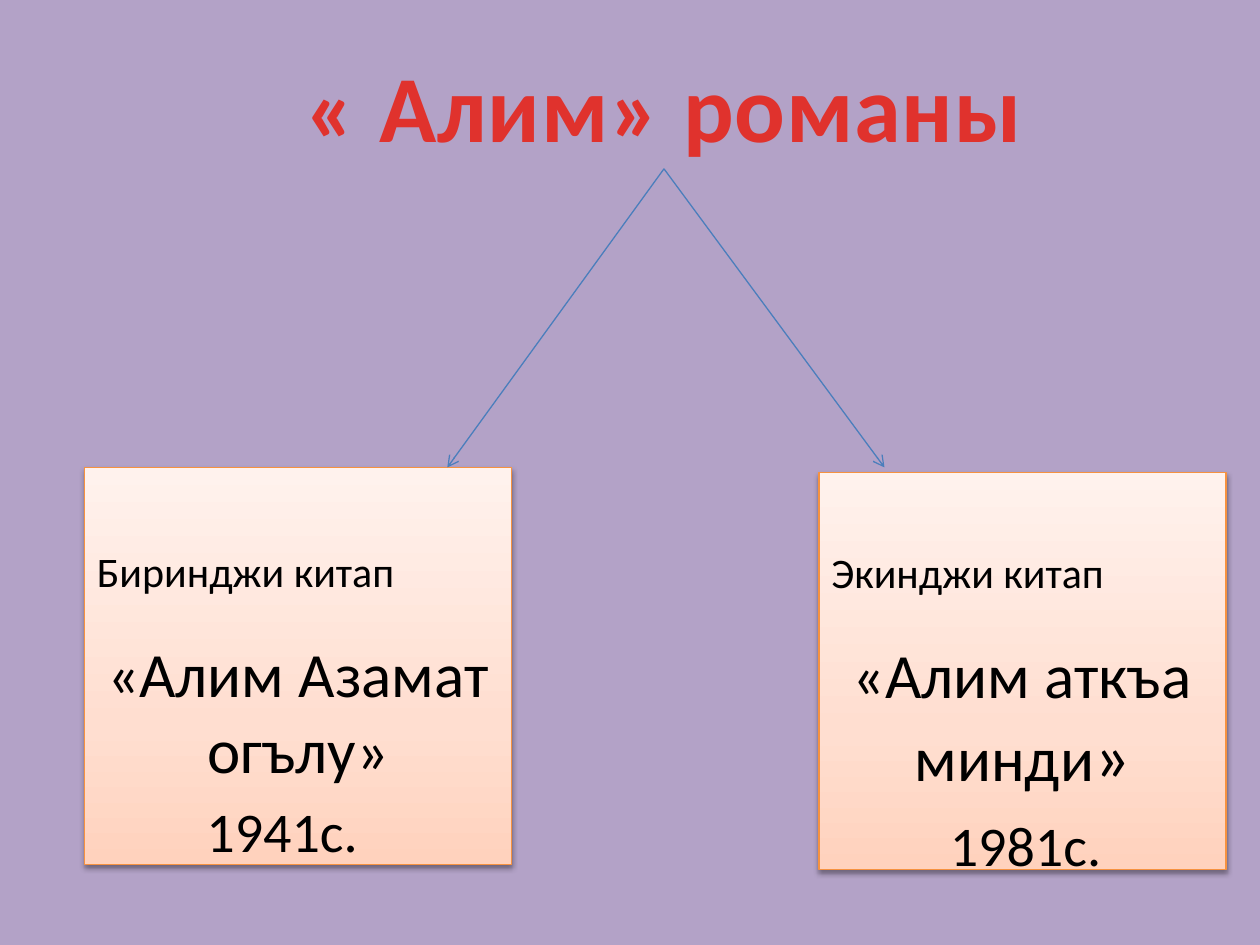
import copy
from dataclasses import dataclass

import pptx
import pptx.dml.color
import pptx.enum.shapes
import pptx.enum.text
import pptx.oxml
import pptx.oxml.ns
import pptx.util

PX = 9144
ALIGN = pptx.enum.text.PP_ALIGN
ANCHOR = pptx.enum.text.MSO_ANCHOR
NS = pptx.oxml.ns.nsdecls("a")


@dataclass(frozen=True)
class Theme:
    font: str = "Calibri"
    background: str = "B3A2C7"
    title: str = "E0322D"
    text: str = "000000"
    arrow: str = "4B7EBC"
    border: str = "F69240"
    box_stops: tuple[tuple[float, str], ...] = ((0, "FFD2BD"), (0.35, "FFDED0"), (1, "FFF2ED"))
    title_size: int = 54
    label_size: int = 24
    name_size: int = 36
    quote_size: int = 40
    year_size: int = 32
    name_gap: int = 22
    line_width: float = 0.75


@dataclass(frozen=True)
class Box:
    left: int
    top: int
    width: int
    height: int

    def emu(self) -> tuple[int, ...]:
        return tuple(v * PX for v in (self.left, self.top, self.width, self.height))


@dataclass(frozen=True)
class Book:
    box: Box
    label: str
    name: tuple[tuple[str, int], ...]
    year: str
    year_box: Box
    arrow_end: tuple[int, int]


THEME = Theme()
TITLE_BOX = Box(229, 33, 596, 101)
ARROW_START = (527, 134)
BOOKS = (
    Book(Box(67, 371, 339, 315), "Биринджи китап",
         (("«Алим Азамат огълу»", THEME.name_size),),
         "1941c.", Box(154, 627, 142, 64), (355, 371)),
    Book(Box(650, 375, 323, 315), "Экинджи китап",
         (("«Алим аткъа минди", THEME.name_size), ("»", THEME.quote_size)),
         "1981c.", Box(744, 638, 142, 64), (702, 371)),
)


def rgb(value: str) -> pptx.dml.color.RGBColor:
    return pptx.dml.color.RGBColor.from_string(value)


def add_run(p, text: str, size: int, color: str = THEME.text, bold: bool = False):
    r = p.add_run()
    r.text = text
    r.font.name = THEME.font
    r.font.size = pptx.util.Pt(size)
    r.font.bold = bold
    r.font.color.rgb = rgb(color)
    return r


def add_title(s, text: str) -> None:
    sp = s.shapes.title
    sp.left, sp.top, sp.width, sp.height = TITLE_BOX.emu()
    tf = sp.text_frame
    tf.word_wrap = False
    tf.auto_size = pptx.enum.text.MSO_AUTO_SIZE.SHAPE_TO_FIT_TEXT
    tf.vertical_anchor = ANCHOR.TOP
    p = tf.paragraphs[0]
    p.alignment = ALIGN.CENTER
    r = add_run(p, text, THEME.title_size, THEME.title, True)
    r.font._element.set("spc", "50")


def add_arrow(s, start: tuple[int, int], end: tuple[int, int]) -> None:
    points = [v * PX for v in start + end]
    cx = s.shapes.add_connector(pptx.enum.shapes.MSO_CONNECTOR.STRAIGHT, *points)
    cx.line.color.rgb = rgb(THEME.arrow)
    cx.line.width = pptx.util.Pt(THEME.line_width)
    cx.line._get_or_add_ln().append(pptx.oxml.parse_xml(f'<a:tailEnd {NS} type="arrow"/>'))
    cx._element.spPr.append(pptx.oxml.parse_xml(f"<a:effectLst {NS}/>"))


def fill_gradient(sp) -> None:
    sp.fill.gradient()
    sp.fill.gradient_angle = 90
    gs_list = sp._element.spPr.find(".//" + pptx.oxml.ns.qn("a:gsLst"))
    while len(gs_list) < len(THEME.box_stops):
        gs_list.append(copy.deepcopy(gs_list[0]))
    for stop, (position, color) in zip(sp.fill.gradient_stops, THEME.box_stops):
        stop.position = position
        stop.color.rgb = rgb(color)


def add_shadow(sp) -> None:
    sp.shadow.inherit = False
    effects = sp._element.spPr.find(pptx.oxml.ns.qn("a:effectLst"))
    effects.append(pptx.oxml.parse_xml(
        f'<a:outerShdw {NS} blurRad="40000" dist="20000" dir="5400000" rotWithShape="0">'
        '<a:srgbClr val="000000"><a:alpha val="38000"/></a:srgbClr></a:outerShdw>'))


def add_book(s, book: Book) -> None:
    sp = s.shapes.add_shape(pptx.enum.shapes.MSO_SHAPE.RECTANGLE, *book.box.emu())
    fill_gradient(sp)
    sp.line.color.rgb = rgb(THEME.border)
    sp.line.width = pptx.util.Pt(THEME.line_width)
    add_shadow(sp)
    tf = sp.text_frame
    tf.word_wrap = True
    tf.vertical_anchor = ANCHOR.MIDDLE
    p = tf.paragraphs[0]
    p.alignment = ALIGN.LEFT
    add_run(p, book.label, THEME.label_size)
    p = tf.add_paragraph()
    p.alignment = ALIGN.CENTER
    p.space_before = pptx.util.Pt(THEME.name_gap)
    for text, size in book.name:
        add_run(p, text, size)


def add_year(s, book: Book) -> None:
    tf = s.shapes.add_textbox(*book.year_box.emu()).text_frame
    tf.word_wrap = False
    tf.auto_size = pptx.enum.text.MSO_AUTO_SIZE.SHAPE_TO_FIT_TEXT
    add_run(tf.paragraphs[0], book.year, THEME.year_size)


def main() -> None:
    prs = pptx.Presentation()
    prs.slide_width, prs.slide_height = 1000 * PX, 750 * PX
    s = prs.slides.add_slide(prs.slide_layouts.get_by_name("Title Only"))
    s.background.fill.solid()
    s.background.fill.fore_color.rgb = rgb(THEME.background)
    add_title(s, "« Алим» романы")
    for book in BOOKS:
        add_book(s, book)
        add_arrow(s, ARROW_START, book.arrow_end)
        add_year(s, book)
    prs.save("out.pptx")


if __name__ == "__main__":
    main()
